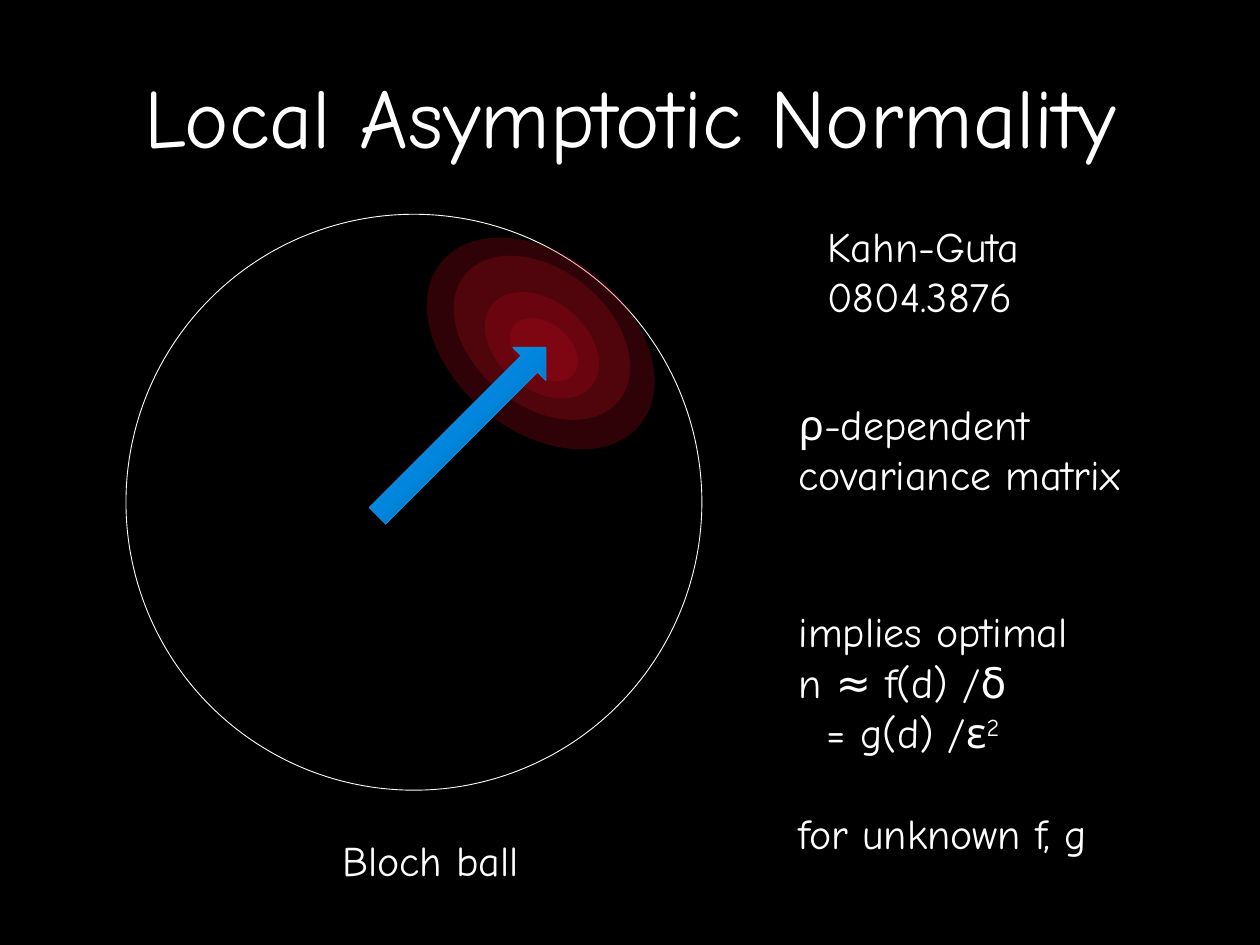
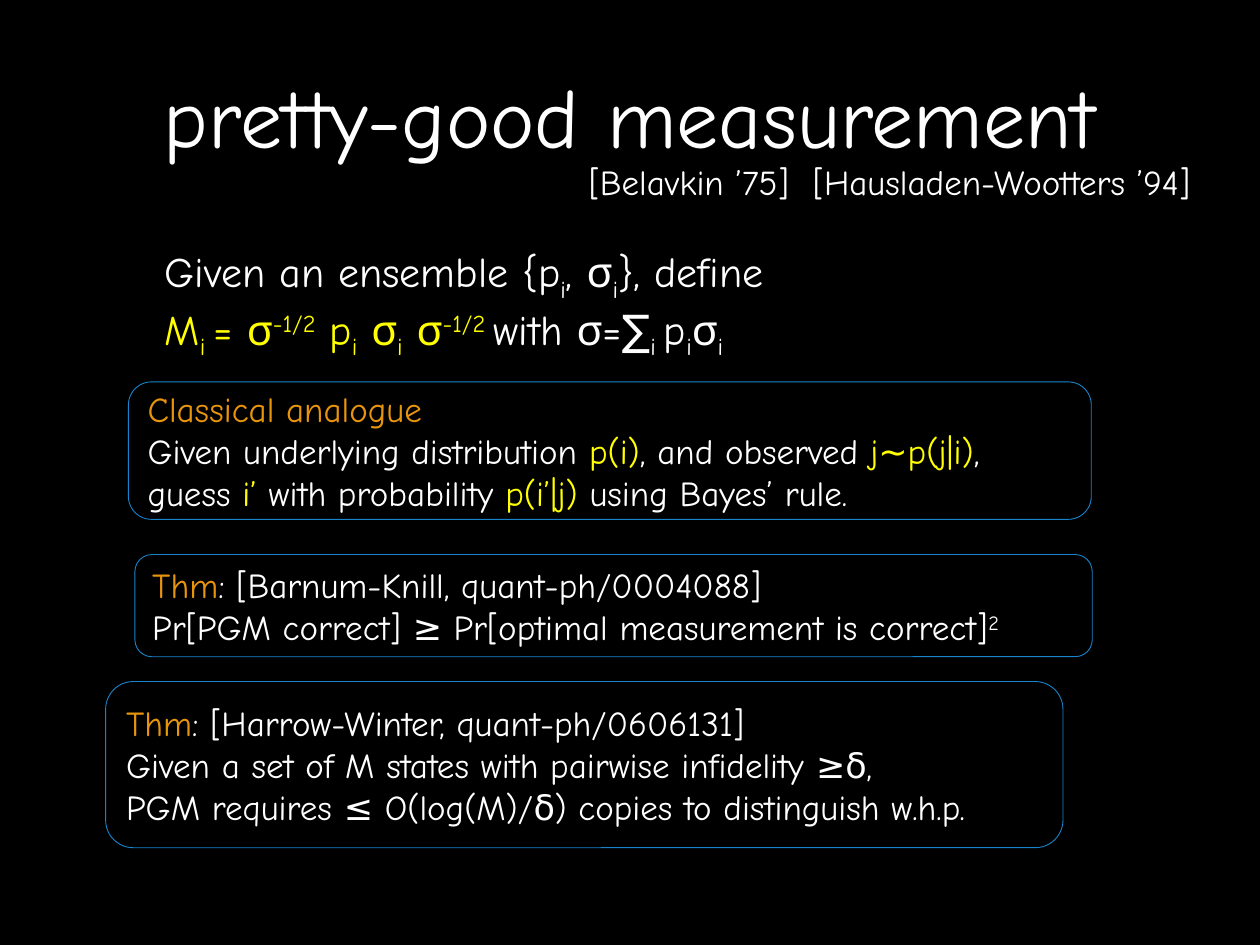
import copy

from lxml import etree
from pptx import Presentation
from pptx.dml.color import RGBColor
from pptx.enum import shapes, text
from pptx.oxml.ns import qn
from pptx.util import Cm, Pt

FONT = "Comic Neue"
BLACK = RGBColor(0x00, 0x00, 0x00)
WHITE = RGBColor(0xFF, 0xFF, 0xFF)
YELLOW = RGBColor(0xFF, 0xFF, 0x00)
ORANGE = RGBColor(0xE8, 0x95, 0x0E)
BLUE = RGBColor(0x18, 0x84, 0xCD)
RED = RGBColor(0xB5, 0x0B, 0x1B)
ARROW_GRADIENT = [
    (0, RGBColor(0x01, 0x45, 0x73)),
    (0.5, RGBColor(0x02, 0x85, 0xDD)),
    (1, RGBColor(0x1A, 0xA3, 0xFF)),
]
RED_OPACITY = 26
RED_TILT = 39.3

# A run is plain text, or (text, colour, baseline shift in percent).
SUB, SUP = -25, 30
I_SUB = ("i", WHITE, SUB)
YELLOW_I = ("i", YELLOW, SUB)


def yellow(words, shift=0):
    return words, YELLOW, shift


def orange(words):
    return words, ORANGE, 0


# Boxes are (left, top, width, height) in centimetres.
TITLE_BOX = (1.9, 0.33, 21.6, 3.96)
BLOCH_CIRCLE = (2.54, 4.32, 11.61, 11.61)
BLOCH_ARROW = (6.91, 8.23, 4.8, 0.94)
RED_ELLIPSES = [
    (10.19, 6.53, 1.55, 1.04),
    (9.63, 6.07, 2.59, 1.78),
    (8.92, 5.44, 4.01, 2.74),
    (8.31, 5.16, 5.18, 3.53),
]

NORMALITY_NOTES = [
    ((6.65, 16.69, 4.27, 1.27), [["Bloch ball"]]),
    ((16.43, 4.32, 4.55, 2.31), [["Kahn-Guta"], ["0804.3876"]]),
    ((15.85, 7.9, 7.32, 2.31), [["ρ-dependent"], ["covariance matrix"]]),
]
OPTIMAL_BOX = (15.85, 12.09, 6.93, 5.05)
OPTIMAL_LINES = [
    ["implies optimal"],
    ["n ≈ f(d) /δ"],
    ["= g(d) /ε", ("2", WHITE, SUP)],
    ["for unknown f, g"],
]

CITATIONS = [
    ((11.62, 3.12, 5, 1.12), [["[Belavkin ’75]"]]),
    ((16.14, 3.12, 8.2, 1.12), [["[Hausladen-Wootters ’94]"]]),
]
ENSEMBLE_BOX = (3.07, 4.83, 14.58, 2.31)
ENSEMBLE_LINES = [
    ["Given an ensemble {p", I_SUB, ", σ", I_SUB, "}, define"],
    [
        yellow("M"), yellow("i ", SUB), yellow("= σ"), yellow("-1/2", SUP),
        yellow(" p"), YELLOW_I, yellow(" σ"), YELLOW_I,
        yellow(" σ"), yellow("-1/2 ", SUP),
        "with σ=∑", ("i ", WHITE, SUB), "p", I_SUB, "σ", I_SUB,
    ],
]
CARDS = [
    ((2.59, 7.7, 19.41, 2.77), [
        [orange("Classical analogue")],
        ["Given underlying distribution ", yellow("p(i)"),
         ", and observed ", yellow("j∼p(j|i)"), ","],
        ["guess ", yellow("i’"), " with probability ", yellow("p(i’|j)"),
         " using Bayes’ rule."],
    ]),
    ((2.72, 11.18, 19.3, 2.06), [
        [orange("Thm"), ": [Barnum-Knill, quant-ph/0004088]"],
        ["Pr[PGM correct] ≥ Pr[optimal measurement is correct]",
         ("2", WHITE, SUP)],
    ]),
    ((2.13, 13.74, 19.3, 3.35), [
        [orange("Thm"), ": [Harrow-Winter, quant-ph/0606131]"],
        ["Given a set of M states with pairwise infidelity ≥δ,"],
        ["PGM requires ≤ O(log(M)/δ) copies to distinguish w.h.p."],
    ]),
]


def in_cm(box):
    return [Cm(length) for length in box]


def write_lines(text_frame, lines, size, align=text.PP_ALIGN.LEFT):
    """Write each list of runs as one paragraph."""
    text_frame.word_wrap = True
    for index, runs in enumerate(lines):
        paragraph = (text_frame.add_paragraph() if index
                     else text_frame.paragraphs[0])
        paragraph.alignment = align
        for item in runs:
            words, colour, shift = (
                (item, WHITE, 0) if isinstance(item, str) else item)
            run = paragraph.add_run()
            run.text = words
            run.font.name = FONT
            run.font.size = Pt(size)
            run.font.color.rgb = colour
            if shift:
                run._r.get_or_add_rPr().set("baseline", str(shift * 1000))


def add_text(slide, box, lines, size=24, align=text.PP_ALIGN.LEFT):
    text_frame = slide.shapes.add_textbox(*in_cm(box)).text_frame
    write_lines(text_frame, lines, size, align)
    return text_frame


def add_outline(slide, kind, box, line_colour):
    """Add an unfilled shape; without a line colour it has no line."""
    shape = slide.shapes.add_shape(kind, *in_cm(box))
    shape.shadow.inherit = False
    shape.fill.background()
    if line_colour is None:
        shape.line.fill.background()
    else:
        shape.line.color.rgb = line_colour
        shape.line.width = Pt(0.5)
    return shape


def add_titled_slide(presentation, title):
    slide = presentation.slides.add_slide(presentation.slide_layouts[6])
    slide.background.fill.solid()
    slide.background.fill.fore_color.rgb = BLACK
    text_frame = add_text(slide, TITLE_BOX, [[title]], 48,
                          text.PP_ALIGN.CENTER)
    text_frame.vertical_anchor = text.MSO_ANCHOR.MIDDLE
    return slide


def add_red_ellipse(slide, box):
    ellipse = add_outline(slide, shapes.MSO_SHAPE.OVAL, box, None)
    ellipse.rotation = RED_TILT
    ellipse.fill.solid()
    ellipse.fill.fore_color.rgb = RED
    colour = ellipse.fill._xPr.find(qn("a:solidFill"))[0]
    alpha = etree.SubElement(colour, qn("a:alpha"))
    alpha.set("val", str(RED_OPACITY * 1000))


def add_bloch_arrow(slide):
    arrow = add_outline(slide, shapes.MSO_SHAPE.RIGHT_ARROW, BLOCH_ARROW, BLUE)
    arrow.rotation = 315
    arrow.fill.gradient()
    arrow.fill.gradient_angle = 90
    stop_list = next(arrow._element.iter(qn("a:gsLst")))
    stop_list.append(copy.deepcopy(stop_list[0]))
    for stop, (position, colour) in zip(arrow.fill.gradient_stops,
                                        ARROW_GRADIENT):
        stop.position = position
        stop.color.rgb = colour


def build_normality_slide(presentation):
    slide = add_titled_slide(presentation, "Local Asymptotic Normality")
    add_outline(slide, shapes.MSO_SHAPE.OVAL, BLOCH_CIRCLE, WHITE)
    for box in RED_ELLIPSES:
        add_red_ellipse(slide, box)
    add_bloch_arrow(slide)
    for box, lines in NORMALITY_NOTES:
        add_text(slide, box, lines)

    optimal = add_text(slide, OPTIMAL_BOX, OPTIMAL_LINES)
    second_bound, remark = optimal.paragraphs[2:]
    second_bound._p.get_or_add_pPr().set("marL", str(Cm(0.57)))
    remark.space_before = Pt(29)


def build_measurement_slide(presentation):
    slide = add_titled_slide(presentation, "pretty-good measurement")
    add_text(slide, ENSEMBLE_BOX, ENSEMBLE_LINES)
    for box, lines in CITATIONS:
        add_text(slide, box, lines, 20)
    for box, lines in CARDS:
        card = add_outline(slide, shapes.MSO_SHAPE.ROUNDED_RECTANGLE, box, BLUE)
        card.text_frame.vertical_anchor = text.MSO_ANCHOR.MIDDLE
        write_lines(card.text_frame, lines, 20)


def main():
    presentation = Presentation()
    presentation.slide_width = Cm(25.4)
    presentation.slide_height = Cm(19.05)
    build_normality_slide(presentation)
    build_measurement_slide(presentation)
    presentation.save("out.pptx")


if __name__ == "__main__":
    main()
